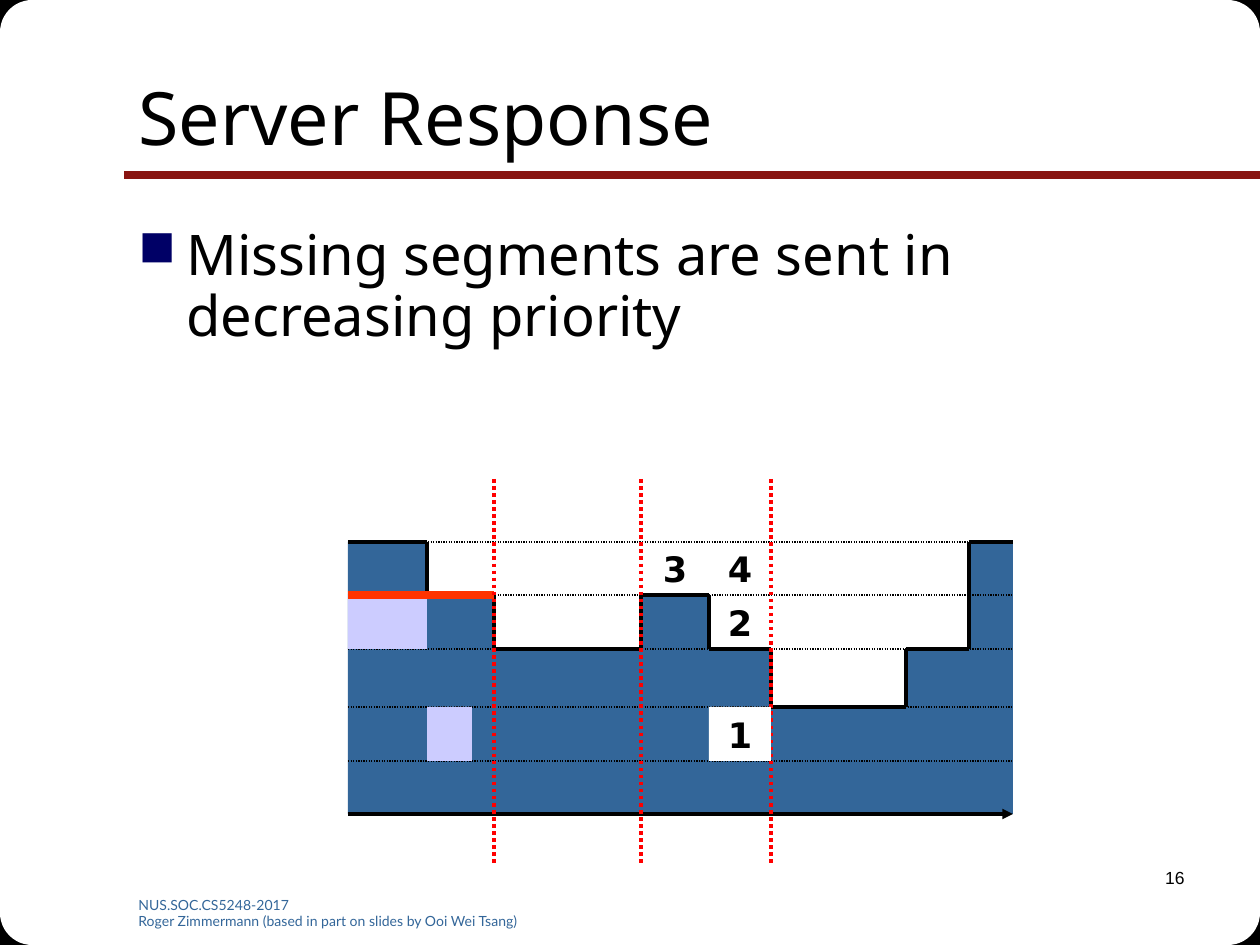
from itertools import pairwise
from typing import NamedTuple

from lxml import etree
from pptx import Presentation
from pptx.dml.color import RGBColor
from pptx.enum.dml import MSO_LINE
from pptx.enum.shapes import MSO_CONNECTOR, MSO_SHAPE
from pptx.enum.text import MSO_ANCHOR, PP_ALIGN
from pptx.oxml.ns import qn
from pptx.util import Pt

PX = 914400 / 126
WIDTH, HEIGHT = 1260, 945
RECT, ROUNDED = MSO_SHAPE.RECTANGLE, MSO_SHAPE.ROUNDED_RECTANGLE
DOTTED = MSO_LINE.ROUND_DOT
LEFT, CENTER, RIGHT = PP_ALIGN.LEFT, PP_ALIGN.CENTER, PP_ALIGN.RIGHT
TOP, MIDDLE = MSO_ANCHOR.TOP, MSO_ANCHOR.MIDDLE

BLACK, WHITE, RED = "000000", "FFFFFF", "FF0000"
CACHED, RESENT, PREFETCH = "336699", "CCCCFF", "FF3300"

# Layer boundaries from top to bottom, and the time axis
L4, L3, L2, L1, L0, BASE = 542, 595, 649, 707, 761, 814
START, END = 348, 1013
REQUESTS = (494, 641, 771)


class Box(NamedTuple):
    left: int
    top: int
    right: int
    bottom: int


class Style(NamedTuple):
    size: int
    font: str
    color: str = BLACK
    bold: bool = False


class Segment(NamedTuple):
    label: str
    box: Box


NUMBER = Style(20, "DejaVu Sans", bold=True)

CACHED_BLOCKS = (
    Box(START, L2, 771, BASE),
    Box(771, L1, END, BASE),
    Box(START, L4, 427, L2),
    Box(427, L3, 494, L2),
    Box(641, L3, 709, L2),
    Box(906, L2, 973, L1),
    Box(969, L4, END, 738),
)
CACHE_OUTLINE = (
    (START, L4), (427, L4), (427, L3), (494, L3), (494, L2), (641, L2),
    (641, L3), (709, L3), (709, L2), (771, L2), (771, L1), (906, L1),
    (906, L2), (969, L2), (969, L4), (END, L4),
)
RESENT_BLOCKS = (Box(427, L1, 472, L0), Box(START, L3, 427, L2))
MISSING_SEGMENTS = (
    Segment("1", Box(709, L1, 771, L0)),
    Segment("2", Box(709, L3, 771, L2)),
    Segment("3", Box(641, L4, 709, L3)),
    Segment("4", Box(709, L4, 771, L3)),
)


def emu(px: int) -> int:
    return round(px * PX)


def rgb(color: str) -> RGBColor:
    return RGBColor.from_string(color)


def frame(box: Box) -> tuple[int, int, int, int]:
    """Left, top, width and height in EMU."""
    return (emu(box.left), emu(box.top),
            emu(box.right - box.left), emu(box.bottom - box.top))


def add_block(slide, box: Box, color: str, preset=RECT):
    block = slide.shapes.add_shape(preset, *frame(box))
    block.shadow.inherit = False
    block.fill.solid()
    block.fill.fore_color.rgb = rgb(color)
    block.line.fill.background()
    return block


def add_line(slide, start: tuple[int, int], end: tuple[int, int],
             color: str, weight: float, dash=None):
    line = slide.shapes.add_connector(
        MSO_CONNECTOR.STRAIGHT, *map(emu, (*start, *end)))
    line.line.color.rgb = rgb(color)
    line.line.width = Pt(weight)
    if dash is not None:
        line.line.dash_style = dash
    etree.SubElement(line._element.spPr, qn("a:effectLst"))
    return line


def add_text(slide, box: Box, text: str, style: Style,
             align=LEFT, anchor=TOP, wrap: bool = True):
    text_frame = slide.shapes.add_textbox(*frame(box)).text_frame
    text_frame.word_wrap = wrap
    text_frame.vertical_anchor = anchor
    text_frame.text = text
    for paragraph in text_frame.paragraphs:
        paragraph.alignment = align
        for run in paragraph.runs:
            run.font.size = Pt(style.size)
            run.font.name = style.font
            run.font.bold = style.bold
            run.font.color.rgb = rgb(style.color)
    return text_frame


def add_bullet(paragraph, color: str, percent: int, indent: int) -> None:
    properties = paragraph._p.get_or_add_pPr()
    properties.set("marL", str(emu(indent)))
    properties.set("indent", str(-emu(indent)))
    bullet_color = etree.SubElement(properties, qn("a:buClr"))
    etree.SubElement(bullet_color, qn("a:srgbClr"), val=color)
    etree.SubElement(properties, qn("a:buSzPct"), val=str(percent * 1000))
    etree.SubElement(properties, qn("a:buChar"), char="■")


def draw_rounded_corners(slide) -> None:
    for size, color, preset in ((54, BLACK, RECT), (193, WHITE, ROUNDED)):
        for left in (0, WIDTH - size):
            for top in (0, HEIGHT - size):
                corner = Box(left, top, left + size, top + size)
                add_block(slide, corner, color, preset)


def draw_texts(slide) -> None:
    add_line(slide, (WIDTH, 175), (124, 175), "891411", 4.5)
    add_text(slide, Box(126, 890, 588, 925),
             "NUS.SOC.CS5248-2017\n"
             "Roger Zimmermann (based in part on slides by Ooi Wei Tsang)",
             Style(8, "Lato", CACHED))
    add_text(slide, Box(935, 861, 1197, 924), "16", Style(10, "Arial"), RIGHT)
    add_text(slide, Box(126, 38, 1197, 195), "Server Response",
             Style(42, "Noto Sans"), anchor=MIDDLE)
    body = add_text(slide, Box(126, 221, 1197, 844),
                    "Missing segments are sent in decreasing priority",
                    Style(32, "Noto Sans"))
    point = body.paragraphs[0]
    point.line_spacing = 0.9
    add_bullet(point, "000066", 90, 48)


def draw_cache_diagram(slide) -> None:
    for box in CACHED_BLOCKS:
        add_block(slide, box, CACHED)

    time_axis = add_line(slide, (START, BASE), (END, BASE), BLACK, 2)
    etree.SubElement(time_axis.line._get_or_add_ln(), qn("a:tailEnd"),
                     type="triangle")
    for level in (L0, L1, L2, L3, L4):
        add_line(slide, (START, level), (END, level), BLACK, 0.75, DOTTED)
    for start, end in pairwise(CACHE_OUTLINE):
        add_line(slide, start, end, BLACK, 2)

    for box in RESENT_BLOCKS:
        add_block(slide, box, RESENT)
    add_line(slide, (START, L3), (494, L3), PREFETCH, 4.5)
    for x in REQUESTS:
        add_line(slide, (x, 479), (x, 863), RED, 2, DOTTED)

    add_block(slide, MISSING_SEGMENTS[0].box, WHITE)
    for segment in MISSING_SEGMENTS:
        add_text(slide, segment.box, segment.label, NUMBER,
                 CENTER, MIDDLE, wrap=False)


def main() -> None:
    deck = Presentation()
    deck.slide_width, deck.slide_height = emu(WIDTH), emu(HEIGHT)
    slide = deck.slides.add_slide(deck.slide_layouts[6])
    draw_rounded_corners(slide)
    draw_texts(slide)
    draw_cache_diagram(slide)
    deck.save("out.pptx")


if __name__ == "__main__":
    main()
